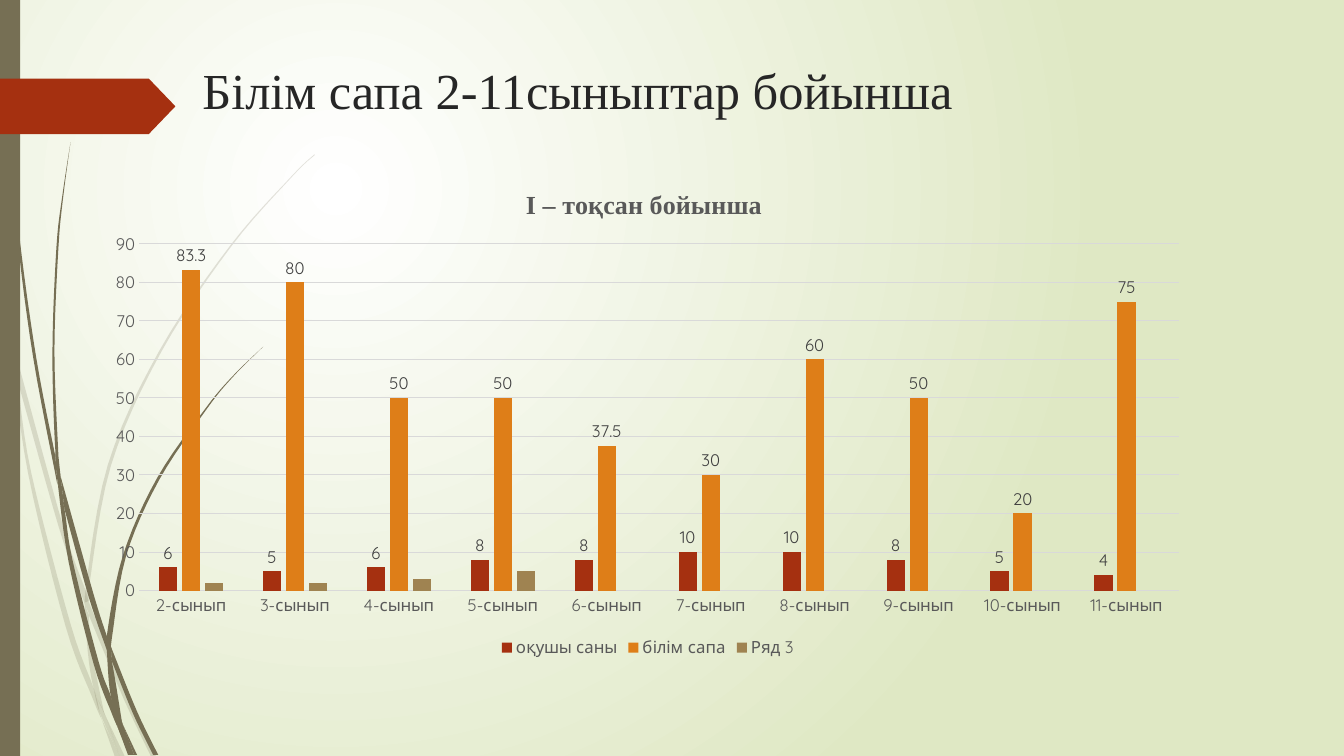
from lxml import etree
from pptx import Presentation
from pptx.chart.data import CategoryChartData
from pptx.dml.color import RGBColor
from pptx.enum.chart import XL_CHART_TYPE, XL_LABEL_POSITION, XL_LEGEND_POSITION, XL_TICK_MARK
from pptx.enum.shapes import MSO_SHAPE
from pptx.util import Inches, Pt

COLUMN, OUTSIDE = XL_CHART_TYPE.COLUMN_CLUSTERED, XL_LABEL_POSITION.OUTSIDE_END
BOTTOM, NO_TICK = XL_LEGEND_POSITION.BOTTOM, XL_TICK_MARK.NONE
RECT, PENTAGON = MSO_SHAPE.RECTANGLE, MSO_SHAPE.PENTAGON

COLORS = {"center": "FFFFFF", "edge": "DFE8C4", "olive": "766F54", "red": "A53010",
          "orange": "DE7E18", "tan": "9F8351", "title": "262626", "label": "404040",
          "axis": "595959", "grid": "D9D9D9"}
SERIF, SANS = "Times New Roman", "Quicksand"
A = "http://schemas.openxmlformats.org/drawingml/2006/main"
C = "http://schemas.openxmlformats.org/drawingml/2006/chart"

PALE_STEMS = [
    ([(0.11, 3.5), (0.09, 3.22), (0, 2.82)], [(0, 2.99), (0.1, 3.44)]),
    ([(0.14, 3.45), (0.62, 5.2), (0.85, 5.86)], [(0.84, 5.99), (0.58, 5.22), (0.17, 3.76)]),
    ([(0.88, 5.96), (0.92, 6.07), (1.27, 6.92), (1.55, 7.51)], [(1.5, 7.51), (1.23, 6.94), (0.88, 6.1)]),
    ([(1.05, 7.11), (1.24, 7.51)], [(1.19, 7.51), (1.05, 7.11)]),
    ([(0.11, 3.5), (0.17, 3.76), (0.31, 4.69), (0.7, 6.19), (0.93, 6.83), (0.99, 7.07)],
     [(1.01, 7.14), (0.92, 6.93), (0.65, 6.21), (0.28, 4.7), (0.11, 3.5)]),
    ([(0.84, 5.99), (0.87, 6.46), (0.93, 6.83), (1.05, 7.11)], [(1.03, 7.06), (0.91, 6.46), (0.88, 6.1)]),
    ([(3.12, 1.53), (2.89, 1.75), (2.28, 2.44), (1.58, 3.48), (1.07, 4.61), (0.85, 5.84), (0.88, 5.96)],
     [(0.88, 5.84), (1.1, 4.62), (1.6, 3.49), (2.29, 2.45), (2.9, 1.75), (3.12, 1.54)]),
    ([(1.01, 7.14), (1.14, 7.51)], [(1.19, 7.51), (1.01, 7.14)]),
    ([(0.88, 6.08), (0.88, 5.96)], [(0.85, 5.86), (0.84, 5.99)]),
    ([(0.93, 6.83), (0.99, 7.07), (1.19, 7.51)], [(1.19, 7.51), (1.05, 7.11), (0.96, 6.92)]),
]
DARK_STEMS = [
    ([(0.04, 0), (0.05, 0.48), (0.08, 1.09), (0.19, 2.32), (0.36, 3.55), (0.55, 4.53)],
     [(0.57, 4.81), (0.33, 3.55), (0.17, 2.33), (0.07, 1.1), (0.04, 0.48), (0.03, 0)]),
    ([(0.6, 4.72), (0.93, 5.9), (1.06, 6.31)], [(1.06, 6.45), (0.88, 5.92), (0.64, 5.05)]),
    ([(1.1, 6.41), (1.13, 6.49), (1.36, 7.06), (1.57, 7.49)], [(1.52, 7.49), (1.32, 7.08), (1.11, 6.56)]),
    ([(0.57, 4.77), (0.64, 5.05), (0.72, 5.56), (0.98, 6.57), (1.1, 6.91), (1.16, 7.17)],
     [(1.17, 7.22), (1.11, 7.08), (0.93, 6.59), (0.68, 5.57), (0.57, 4.77)]),
    ([(0.7, 1.41), (0.62, 1.93), (0.56, 2.45), (0.52, 3.49), (0.55, 4.49), (0.6, 4.72)],
     [(0.58, 4.53), (0.54, 3.49), (0.58, 2.45), (0.63, 1.93), (0.7, 1.41)]),
    ([(1.22, 7.19), (1.36, 7.49)], [(1.33, 7.49), (1.22, 7.19)]),
    ([(0.55, 4.49), (0.6, 4.72)], [(0.64, 5.05), (0.57, 4.77), (0.55, 4.53)]),
    ([(2.61, 3.44), (2.31, 3.73), (2.04, 4.05), (1.56, 4.74), (1.22, 5.51), (1.06, 6.31), (1.1, 6.41)],
     [(1.11, 6.33), (1.25, 5.52), (1.58, 4.76), (2.05, 4.06), (2.31, 3.74), (2.61, 3.44)]),
    ([(1.17, 7.22), (1.27, 7.49)], [(1.31, 7.49), (1.17, 7.22)]),
    ([(1.06, 6.45), (1.1, 6.91), (1.22, 7.19)], [(1.21, 7.16), (1.11, 6.56), (1.06, 6.45)]),
    ([(1.06, 6.31), (1.1, 6.41), (1.11, 6.56)], [(1.11, 6.56), (1.06, 6.45)]),
    ([(1.1, 6.91), (1.17, 7.22), (1.3, 7.49)], [(1.33, 7.49), (1.22, 7.19), (1.1, 6.91)]),
]
CLASSES = [f"{n}-сынып" for n in range(2, 12)]
SERIES = [
    ("оқушы саны", [6, 5, 6, 8, 8, 10, 10, 8, 5, 4], "red", True),
    ("білім сапа", [83.3, 80, 50, 50, 37.5, 30, 60, 50, 20, 75], "orange", True),
    ("Ряд 3", [2, 2, 3, 5] + [None] * 6, "tan", False),
]


def rgb(name):
    return RGBColor.from_string(COLORS[name])


def paint(sp, color, alpha=None):
    sp.shadow.inherit = False
    sp.fill.solid()
    sp.fill.fore_color.rgb = rgb(color)
    sp.line.fill.background()
    if alpha is not None:
        clr = sp._element.spPr.find(f".//{{{A}}}srgbClr")
        etree.SubElement(clr, f"{{{A}}}alpha", val=str(alpha * 1000))


def format_font(font, size, color, name=SANS, bold=False):
    font.size, font.name, font.bold = Pt(size), name, bold
    font.color.rgb = rgb(color)


def write(tf, text, **fmt):
    r = tf.paragraphs[0].add_run()
    r.text = text
    format_font(r.font, **fmt)


def smooth_edge(points, steps=6):
    ends = [points[0], *points, points[-1]]
    curve = []
    for quad in zip(ends, ends[1:], ends[2:], ends[3:]):
        for t in (i / steps for i in range(steps)):
            curve.append([b + t / 2 * (c - a + t * (2 * a - 5 * b + 4 * c - d)
                                       + t * t * (3 * (b - c) + d - a))
                          for a, b, c, d in zip(*quad)])
    return curve + [points[-1]]


def add_background(s):
    s.background.fill.gradient()
    old = s._element.find(f".//{{{A}}}gradFill")
    stops = "".join(f'<a:gs pos="{pos}"><a:srgbClr val="{COLORS[c]}"/></a:gs>'
                    for pos, c in ((0, "center"), (100000, "edge")))
    old.getparent().replace(old, etree.fromstring(
        f'<a:gradFill xmlns:a="{A}" rotWithShape="1"><a:gsLst>{stops}</a:gsLst><a:path path="circle">'
        '<a:fillToRect l="50000" t="50000" r="100000" b="100000"/></a:path></a:gradFill>'))


def add_side(s, x, y, h):
    for stems, alpha in ((PALE_STEMS, 20), (DARK_STEMS, None)):
        for down, back in stems:
            points = [(Inches(x + px), Inches(y + py)) for px, py in smooth_edge(down) + smooth_edge(back)]
            fb = s.shapes.build_freeform(*points[0])
            fb.add_line_segments(points[1:], close=True)
            paint(fb.convert_to_shape(), "olive", alpha)
    paint(s.shapes.add_shape(RECT, Inches(x), Inches(y), Inches(0.2), Inches(h)), "olive")
    tab = s.shapes.add_shape(PENTAGON, Inches(x), Inches(y + 0.78), Inches(1.74), Inches(0.55))
    tab.adjustments[0] = 0.48
    paint(tab, "red")


def add_title(s, x, y, w, h):
    tf = s.shapes.add_textbox(Inches(x), Inches(y), Inches(w), Inches(h)).text_frame
    tf.word_wrap = True
    write(tf, "Білім сапа 2-11сыныптар бойынша", size=36, color="title", name=SERIF)


def set_layout(parent, index, **fractions):
    for old in parent.findall(f"{{{C}}}layout"):
        parent.remove(old)
    inner = '<c:layoutTarget val="inner"/>' if "w" in fractions else ""
    values = "".join(f'<c:{k} val="{v:.4f}"/>' for k, v in fractions.items())
    parent.insert(index, etree.fromstring(
        f'<c:layout xmlns:c="{C}"><c:manualLayout>{inner}<c:xMode val="edge"/><c:yMode val="edge"/>'
        f'{values}</c:manualLayout></c:layout>'))


def add_quality_chart(s, x, y, w, h):
    data = CategoryChartData()
    data.categories = CLASSES
    for name, values, _, _ in SERIES:
        data.add_series(name, values)
    chart = s.shapes.add_chart(COLUMN, Inches(x), Inches(y), Inches(w), Inches(h), data).chart
    format_font(chart.font, 10, "axis")
    write(chart.chart_title.text_frame, "I – тоқсан бойынша", size=18.6, color="axis", name=SERIF, bold=True)
    chart.has_legend = True
    chart.legend.position = BOTTOM
    chart.legend.include_in_layout = False
    format_font(chart.legend.font, 12, "axis")

    cat, val = chart.category_axis, chart.value_axis
    val.minimum_scale, val.maximum_scale, val.major_unit = 0, 90, 10
    val.format.line.fill.background()
    for axis, line in ((cat, cat.format.line), (val, val.major_gridlines.format.line)):
        axis.major_tick_mark = axis.minor_tick_mark = NO_TICK
        format_font(axis.tick_labels.font, 12, "axis")
        line.color.rgb = rgb("grid")
        line.width = Pt(0.75)

    plot = chart.plots[0]
    plot.gap_width, plot.overlap, plot.vary_by_categories = 219, -27, False
    for ser, (_, _, color, labelled) in zip(plot.series, SERIES):
        ser.format.fill.solid()
        ser.format.fill.fore_color.rgb = rgb(color)
        if labelled:
            ser.data_labels.show_value = True
            ser.data_labels.position = OUTSIDE
            format_font(ser.data_labels.font, 12, "label")

    space = chart._chartSpace
    set_layout(space.find(f".//{{{C}}}title"), 1, x=4.24 / w, y=0.13 / h)
    set_layout(space.find(f".//{{{C}}}plotArea"), 0, x=0.45 / w, y=0.73 / h, w=10.31 / w, h=3.44 / h)
    space.find(f"{{{C}}}chart").addnext(etree.fromstring(
        f'<c:spPr xmlns:c="{C}" xmlns:a="{A}"><a:noFill/><a:ln><a:noFill/></a:ln></c:spPr>'))


prs = Presentation()
prs.slide_width, prs.slide_height = Inches(13.33), Inches(7.5)
s = prs.slides.add_slide(prs.slide_layouts[6])
add_background(s)
add_side(s, 0, 0, 7.5)
add_title(s, 1.91, 0.54, 9.75, 1.4)
add_quality_chart(s, 0.93, 1.69, 10.99, 4.88)
prs.save("out.pptx")
